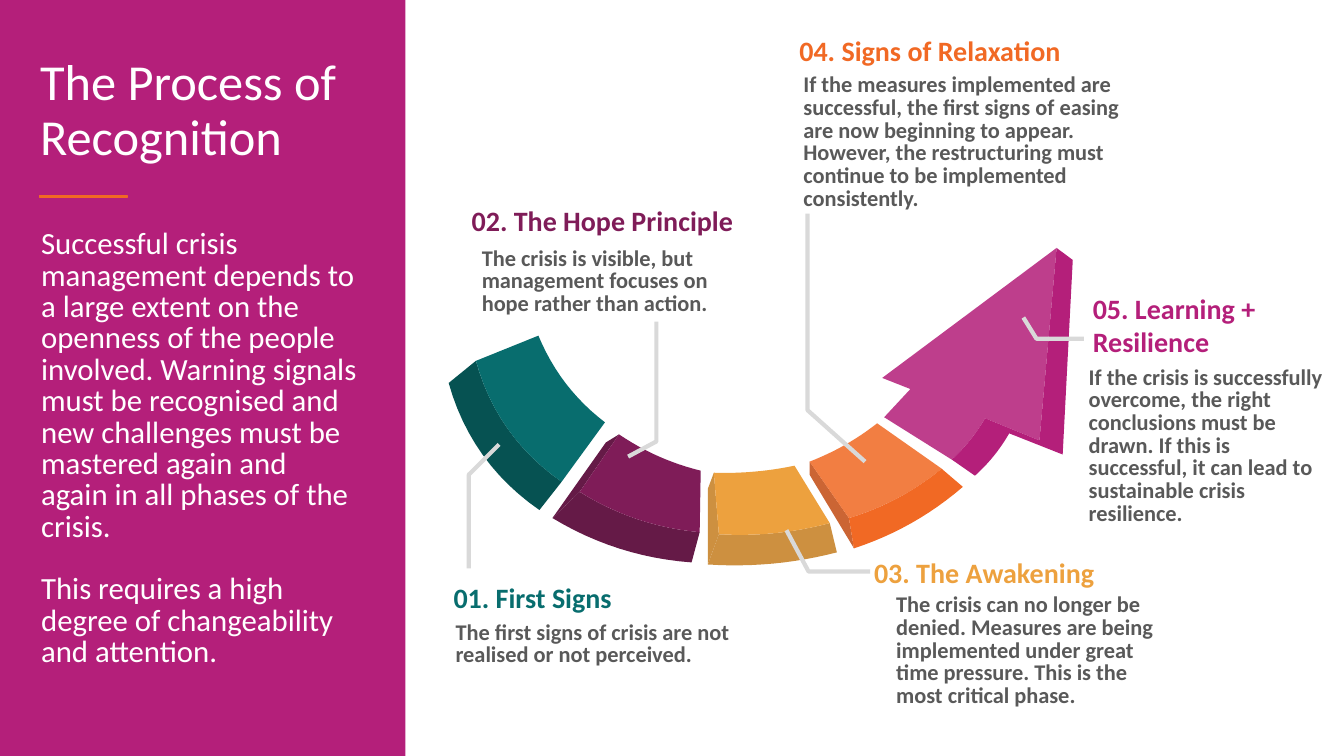
from lxml import etree
from pptx import Presentation
from pptx import util as u
from pptx.dml.color import RGBColor
from pptx.enum import shapes, text
from pptx.oxml.ns import qn

COLS, ROWS = 1333, 750  # the slide's grid
C = dict(magenta="B41F7A", teal="086D6E", darkteal="065252", plum="7F1C58",
         darkplum="651A47", amber="EDA13E", darkamber="CD9040", orange="F16924",
         rust="CB6534", grey="595959", leader="D9D9D9", white="FFFFFF")

prs = Presentation()
prs.slide_width, prs.slide_height = u.Inches(13.33), u.Inches(7.5)
s = prs.slides.add_slide(prs.slide_layouts[6])
cell = prs.slide_width / COLS


def outline(parent, corners, fill=None, opacity=100, bows={}):
    """Join corners given in cells; bows maps an edge's number to its sag over its chord."""
    pts = []
    for i, (x, y) in enumerate(corners):
        nx, ny = corners[(i + 1) % len(corners)]
        bow = bows.get(i, 0)
        for k in range(12 if bow else 1):
            t = k / 12
            sag = 4 * bow * t * (1 - t)
            pts.append(((x + (nx - x) * t - (ny - y) * sag) * cell,
                        (y + (ny - y) * t + (nx - x) * sag) * cell))
    fb = parent.build_freeform(*pts[0])
    fb.add_line_segments(pts[1:], close=fill is not None)
    sp = fb.convert_to_shape()
    sp.shadow.inherit = False
    if fill:
        sp.fill.solid()
        sp.fill.fore_color.rgb = RGBColor.from_string(C[fill])
        sp.line.fill.background()
        if opacity < 100:
            rgb = sp.fill._xPr.find(qn("a:solidFill"))[0]
            etree.SubElement(rgb, qn("a:alpha"), val=str(opacity * 1000))
    else:
        sp.fill.background()
        sp.line.color.rgb = RGBColor.from_string(C["leader"])
        sp.line.width = u.Pt(3)


def write(paras, x, y, w, h, size, color, bold=False, wrap=True, spacing=None, gap=0, grow=True):
    """Add a text box placed in cells."""
    tf = s.shapes.add_textbox(*(round(v * cell) for v in (x, y, w, h))).text_frame
    tf.word_wrap = wrap
    if grow:
        tf.auto_size = text.MSO_AUTO_SIZE.SHAPE_TO_FIT_TEXT
    for i, line in enumerate(paras):
        p = tf.paragraphs[0] if i == 0 else tf.add_paragraph()
        if i:
            p.space_before = u.Pt(gap)
        if spacing:
            p.line_spacing = spacing
        r = p.add_run()
        r.text = line
        r.font.name, r.font.size, r.font.bold = "Calibri", u.Pt(size), bold
        r.font.color.rgb = RGBColor.from_string(C[color])


# Side panel and the rule under the title
for x, y, w, h, color in [(0, 0, 402, ROWS, "magenta"), (39, 194, 87, 2, "orange")]:
    sp = s.shapes.add_shape(shapes.MSO_SHAPE.RECTANGLE, *(round(v * cell) for v in (x, y, w, h)))
    sp.shadow.inherit = False
    sp.fill.solid()
    sp.fill.fore_color.rgb = RGBColor.from_string(C[color])
    sp.line.color.rgb = RGBColor.from_string(C[color])
    sp.line.width = u.Pt(1)
    if color == "magenta":
        sp.line.fill.background()

# Arrow segments: colours of top, front and side, opacity of the top, bow of the outer edge,
# top corners (inner left, inner right, outer right, outer left), bottom left and right, back
segments = [
    ("teal", "darkteal", None, 100, 0.09,
     (534, 333), (600, 419), (557, 478), (472, 358), (445, 380), (535, 506), None),
    ("plum", "darkplum", "darkplum", 100, 0.06,
     (614, 431), (695, 467), (694, 528), (575, 488), (548, 514), (686, 558), (601, 439)),
    ("amber", "darkamber", "darkamber", 100, 0.04,
     (708, 469), (788, 462), (823, 519), (713, 530), (702, 560), (830, 548), (702, 485)),
    ("orange", "orange", "rust", 86, 0.05,
     (803, 458), (870, 420), (934, 465), (842, 514), (847, 544), (955, 483), (803, 471)),
]
for top, front, side, opacity, bow, il, ir, outr, outl, botl, botr, back in segments:
    grp = s.shapes.add_group_shape().shapes
    if side:
        outline(grp, [il, outl, botl, back], side)
    outline(grp, [outl, outr, botr, botl], front, bows={0: bow, 2: -bow})
    outline(grp, [il, ir, outr, outl], top, opacity, {0: bow * 0.75, 2: -bow})

# Arrowhead: its thickness, then its face
tip, notch, shaft, barb = (1048, 246), (977, 415), (944, 456), (1031, 437)
grp = s.shapes.add_group_shape().shapes
outline(grp, [tip, barb, notch, shaft, (967, 472), (1001, 430), (1054, 451), (1064, 258)],
        "magenta", bows={2: -0.04, 4: 0.04})
outline(grp, [tip, (875, 375), (903, 386), (877, 414), shaft, notch, barb],
        "magenta", 86, {4: 0.04})

# Leader lines from the segments to their labels
leaders = [[(858, 458), (801, 407), (801, 212)], [(623, 453), (651, 438), (651, 319)],
           [(780, 526), (802, 567), (863, 567)], [(1015, 315), (1028, 336), (1075, 336)],
           [(495, 441), (465, 471), (465, 564)]]
for corners in leaders:
    outline(s.shapes, corners)

# Labels: heading, colour, its place and width, then the body, its place, width and line count
labels = [
    ("01. First Signs", "teal", 440, 571, 178,
     "The first signs of crisis are not realised or not perceived.", 442, 612, 301, 2),
    ("02. The Hope Principle", "plum", 458, 197, 282,
     "The crisis is visible, but management focuses on hope rather than action.",
     468, 241, 259, 3),
    ("04. Signs of Relaxation", "orange", 783, 28, 282,
     "If the measures implemented are successful, the first signs of easing are now beginning "
     "to appear. However, the restructuring must continue to be implemented consistently.",
     787, 69, 340, 6),
    ("03. The Awakening", "amber", 857, 546, 241,
     "The crisis can no longer be denied. Measures are being implemented under great time "
     "pressure. This is the most critical phase.", 879, 585, 281, 5),
    ("05. Learning + Resilience", "magenta", 1074, 284, 234,
     "If the crisis is successfully overcome, the right conclusions must be drawn. If this is "
     "successful, it can lead to sustainable crisis resilience.", 1070, 359, 256, 7),
]
for heading, color, x, y, w, body, bx, by, bw, lines in labels:
    wrap = color == "magenta"
    write([body], bx, by, bw, 10 + 22.5 * lines, size=16, color="grey", bold=True,
          spacing=u.Pt(16.2))
    write([heading], x, y, w, 80 if wrap else 44, size=20, color=color, bold=True, wrap=wrap)

# Panel text
write(["The Process of Recognition"], 30, 52, 375, 339, size=36, color="white", spacing=0.9,
      grow=False)
write(["Successful crisis management depends to a large extent on the openness of the people "
       "involved. Warning signals must be recognised and new challenges must be mastered again "
       "and again in all phases of the crisis.",
       "This requires a high degree of changeability and attention."],
      31, 223, 336, 411, size=22, color="white", spacing=u.Pt(22.4), gap=22.4)

prs.save("out.pptx")
